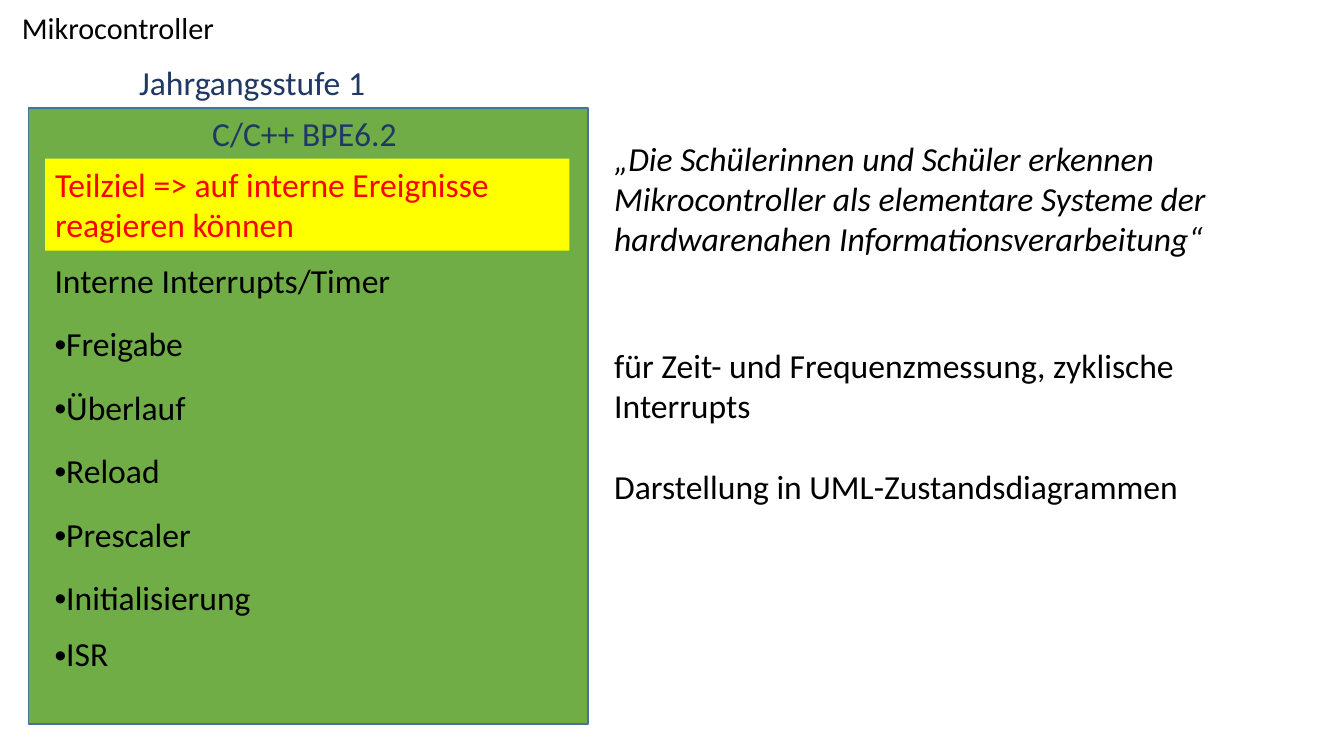
from lxml import etree
from pptx import Presentation
from pptx.dml.color import RGBColor
from pptx.enum.shapes import MSO_SHAPE
from pptx.enum.text import MSO_ANCHOR, PP_ALIGN
from pptx.oxml.ns import qn
from pptx.util import Cm, Pt

RECTANGLE = MSO_SHAPE.RECTANGLE
TOP, MIDDLE = MSO_ANCHOR.TOP, MSO_ANCHOR.MIDDLE
LEFT, CENTER = PP_ALIGN.LEFT, PP_ALIGN.CENTER

BLACK = RGBColor(0x00, 0x00, 0x00)
NAVY = RGBColor(0x20, 0x38, 0x64)
RED = RGBColor(0xFF, 0x00, 0x00)
YELLOW = RGBColor(0xFF, 0xFF, 0x00)
GREEN = RGBColor(0x70, 0xAD, 0x47)
BLUE = RGBColor(0x43, 0x73, 0x9E)

FONT = "Calibri"
BULLET_FONT = "Arial"
BODY_SIZE = 24
NO_GRID_STYLE = "{2D5ABB26-0587-4C30-8999-92F81FD0307C}"

TITLE = "Mikrocontroller"
YEAR = "Jahrgangsstufe 1"
UNIT = "C/C++ BPE6.2 "
GOAL = "Teilziel => auf interne Ereignisse reagieren können"
QUOTE = ("„Die Schülerinnen und Schüler erkennen Mikrocontroller als "
         "elementare Systeme der hardwarenahen Informationsverarbeitung“")
USES = ["für Zeit- und Frequenzmessung, zyklische Interrupts",
        "Darstellung in UML-Zustandsdiagrammen"]
TOPIC = "Interne Interrupts/Timer"
SUBTOPICS = ["Freigabe", "Überlauf", "Reload", "Prescaler", "Initialisierung", "ISR"]

# left, top, width, height in cm
TITLE_BOX = (0.3, 0, 6.05, 1.4)
YEAR_BOX = (3.23, 1.43, 6.25, 1.28)
UNIT_BOX = (0.72, 2.72, 14.1, 15.53)
GOAL_BOX = (1.14, 4, 13.21, 2.32)
QUOTE_BOX = (15.23, 3.34, 18.31, 3.33)
USES_BOX = (15.23, 8.56, 15.04, 4.37)
TOPICS_AT = (1.12, 6.3)
TOPICS_WIDTH = 13.11
ROW_HEIGHT, LAST_ROW_HEIGHT = 1.6, 0.92


def write(frame, texts, color=BLACK, size=BODY_SIZE, align=LEFT, italic=False, gap=0):
    """Fill a text frame with one paragraph per text, gap points apart."""
    for index, text in enumerate(texts):
        paragraph = frame.add_paragraph() if index else frame.paragraphs[0]
        paragraph.text = text
        paragraph.alignment = align
        if index and gap:
            paragraph.space_before = Pt(gap)
        font = paragraph.font
        font.name, font.size, font.italic = FONT, Pt(size), italic
        font.color.rgb = color


def add_text(slide, box, texts, anchor=TOP, wrap=True, **style):
    frame = slide.shapes.add_textbox(*map(Cm, box)).text_frame
    frame.word_wrap = wrap
    frame.vertical_anchor = anchor
    write(frame, texts, **style)


def add_panel(slide, box, text, fill, line=None, **style):
    panel = slide.shapes.add_shape(RECTANGLE, *map(Cm, box))
    panel.shadow.inherit = False
    panel.fill.solid()
    panel.fill.fore_color.rgb = fill
    if line is None:
        panel.line.fill.background()
    else:
        panel.line.color.rgb = line
        panel.line.width = Pt(1)
    panel.text_frame.word_wrap = True
    panel.text_frame.vertical_anchor = TOP
    write(panel.text_frame, [text], **style)


def add_bullet(paragraph):
    properties = paragraph._p.get_or_add_pPr()
    for element in (etree.Element(qn("a:buFont"), typeface=BULLET_FONT),
                    etree.Element(qn("a:buChar"), char="•")):
        properties.insert_element_before(element, "a:tabLst", "a:defRPr", "a:extLst")


def add_topics(slide):
    rows = [TOPIC] + SUBTOPICS
    heights = [ROW_HEIGHT] * (len(rows) - 1) + [LAST_ROW_HEIGHT]
    frame = slide.shapes.add_table(len(rows), 1, *map(Cm, TOPICS_AT),
                                   Cm(TOPICS_WIDTH), Cm(sum(heights)))
    table = frame.table
    table.first_row = table.horz_banding = False
    table._tbl.tblPr.find(qn("a:tableStyleId")).text = NO_GRID_STYLE
    for index, (text, height) in enumerate(zip(rows, heights)):
        table.rows[index].height = Cm(height)
        cell = table.cell(index, 0)
        cell.fill.background()
        cell.vertical_anchor = MIDDLE
        cell.margin_top = cell.margin_bottom = Cm(0.1)
        write(cell.text_frame, [text])
        if index:
            add_bullet(cell.text_frame.paragraphs[0])


def main():
    deck = Presentation()
    deck.slide_width, deck.slide_height = Cm(33.87), Cm(19.05)
    slide = deck.slides.add_slide(deck.slide_layouts[6])

    add_text(slide, TITLE_BOX, [TITLE], anchor=MIDDLE, size=21.6)
    add_panel(slide, UNIT_BOX, UNIT, GREEN, line=BLUE, color=NAVY, align=CENTER)
    add_text(slide, YEAR_BOX, [YEAR], wrap=False, color=NAVY, align=CENTER)
    add_panel(slide, GOAL_BOX, GOAL, YELLOW, color=RED)
    add_text(slide, QUOTE_BOX, [QUOTE], italic=True)
    add_text(slide, USES_BOX, USES, gap=29)
    add_topics(slide)

    deck.save("out.pptx")


if __name__ == "__main__":
    main()
